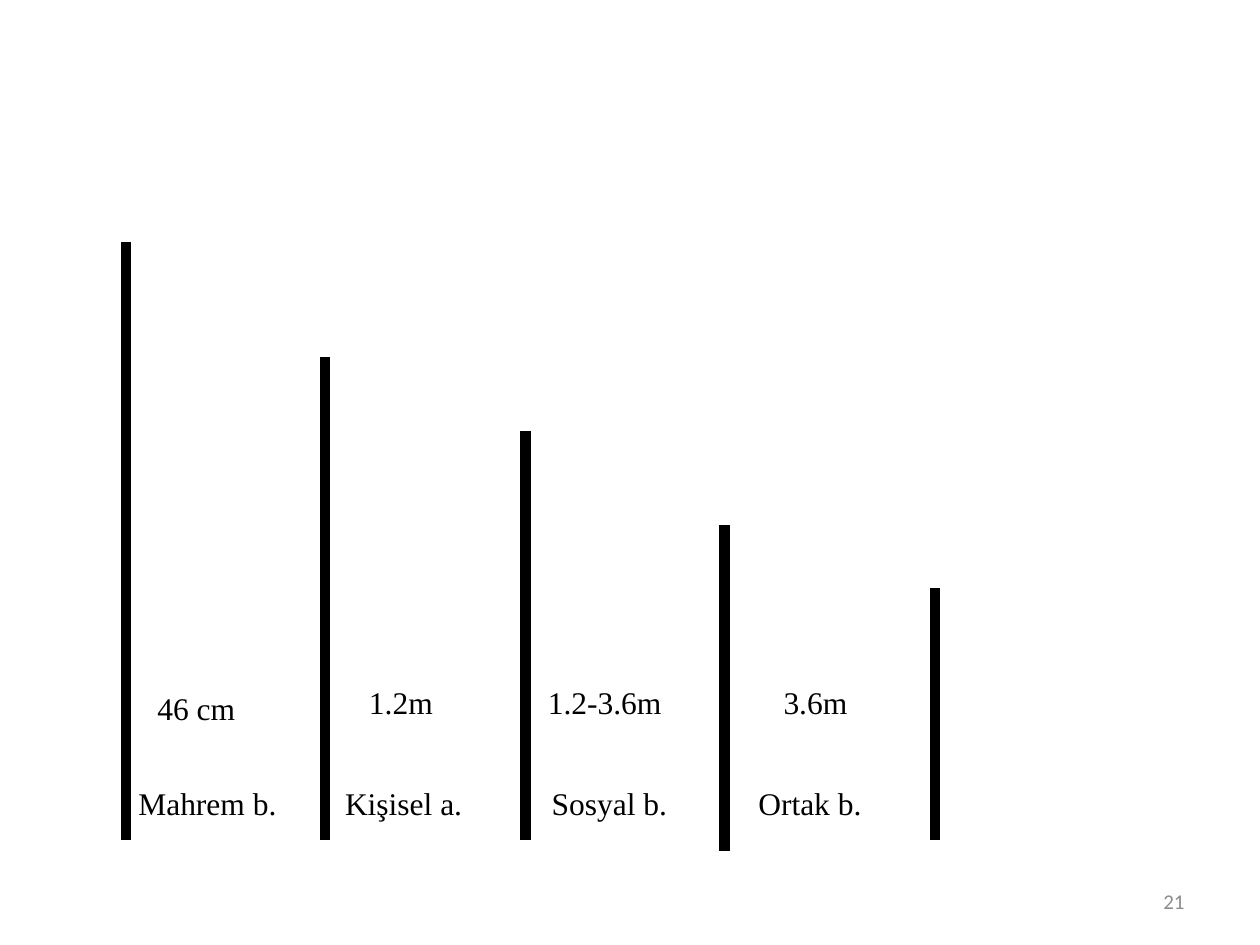
from pptx import Presentation
from pptx.dml.color import RGBColor
from pptx.enum.shapes import MSO_CONNECTOR
from pptx.enum.text import MSO_ANCHOR, MSO_AUTO_SIZE, PP_ALIGN
from pptx.oxml.ns import qn
from pptx.util import Inches, Pt
from lxml import etree

STRAIGHT = MSO_CONNECTOR.STRAIGHT
TOP, MIDDLE = MSO_ANCHOR.TOP, MSO_ANCHOR.MIDDLE
FIT, FIXED = MSO_AUTO_SIZE.SHAPE_TO_FIT_TEXT, MSO_AUTO_SIZE.NONE
LEFT, RIGHT = PP_ALIGN.LEFT, PP_ALIGN.RIGHT

BLACK, GRAY = "000000", "8C8C8C"
BASE = 6.67
BARRIERS = [(1, 1.92, BASE), (2.58, 2.83, BASE), (4.17, 3.42, BASE),
            (5.75, 4.17, 6.75), (7.42, 4.67, BASE)]
DISTANCES = [("46 cm", 1.15, 5.42, 1.02), ("1.2m", 2.83, 5.37, 0.88),
             ("1.2-3.6m", 4.25, 5.37, 1.4), ("3.6m", 6.12, 5.37, 0.88)]
ZONES = [("Mahrem b.", 1.66), ("Kişisel a.", 1.44),
         ("Sosyal b.", 1.42), ("Ortak b.", 1.29)]
ZONE_LEFT, ZONE_STEP, ZONE_TOP = 1, 1.64, 6.17
LABEL_HEIGHT = 0.5
LABEL_FONT = {"name": "Times New Roman", "size": Pt(18)}
NUMBER_FONT = {"name": "Calibri", "size": Pt(12)}


def rgb(value):
    return RGBColor.from_string(value)


def set_attrs(obj, values):
    for name, value in values.items():
        setattr(obj, name, value)


def add_barrier(s, x, top, bottom):
    line = s.shapes.add_connector(
        STRAIGHT, Inches(x), Inches(top), Inches(x), Inches(bottom))
    line.line.color.rgb = rgb(BLACK)
    line.line.width = Pt(6)
    etree.SubElement(line._element.spPr, qn("a:effectLst"))


def add_text(s, text, box, font, color, frame, align=LEFT):
    sp = s.shapes.add_textbox(*map(Inches, box))
    tf = sp.text_frame
    set_attrs(tf, frame)
    p = tf.paragraphs[0]
    p.alignment = align
    r = p.add_run()
    r.text = text
    set_attrs(r.font, font)
    r.font.color.rgb = rgb(color)


def add_label(s, text, x, y, width):
    frame = {"word_wrap": False, "auto_size": FIT, "vertical_anchor": TOP}
    add_text(s, text, (x, y, width, LABEL_HEIGHT), LABEL_FONT, BLACK, frame)


def add_slide_number(s, number):
    frame = {"word_wrap": True, "auto_size": FIXED, "vertical_anchor": MIDDLE}
    add_text(s, number, (7.17, 6.95, 2.33, 0.4), NUMBER_FONT, GRAY, frame, RIGHT)


def main():
    prs = Presentation()
    set_attrs(prs, {"slide_width": Inches(10), "slide_height": Inches(7.5)})
    s = prs.slides.add_slide(prs.slide_layouts[6])
    add_slide_number(s, "21")
    for barrier in BARRIERS:
        add_barrier(s, *barrier)
    for distance in DISTANCES:
        add_label(s, *distance)
    for i, (zone, width) in enumerate(ZONES):
        add_label(s, zone, ZONE_LEFT + i * ZONE_STEP, ZONE_TOP, width)
    prs.save("out.pptx")


if __name__ == "__main__":
    main()
